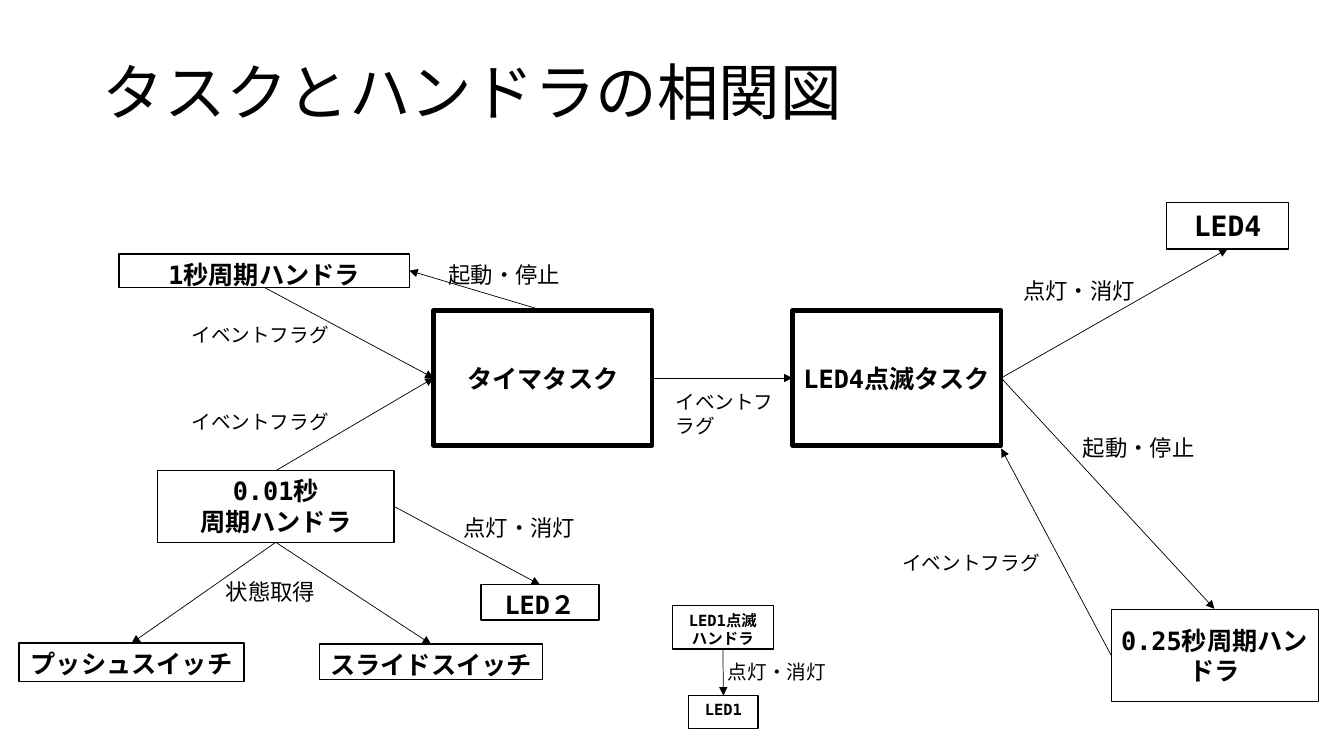
from dataclasses import dataclass

from lxml.etree import SubElement
from pptx import Presentation
from pptx.dml.color import RGBColor
from pptx.enum.shapes import MSO_CONNECTOR, MSO_SHAPE
from pptx.enum.text import MSO_ANCHOR, PP_ALIGN
from pptx.oxml.ns import qn
from pptx.util import Pt

PX = 9144  # EMU per px, 100 px to the inch
TOP, LEFT, BOTTOM, RIGHT = range(4)


@dataclass(frozen=True)
class Theme:
    face: str = "DejaVu Sans Mono"
    ink: RGBColor = RGBColor(0, 0, 0)
    paper: RGBColor = RGBColor(255, 255, 255)
    title: int = 44
    large: int = 20
    body: int = 18
    note: int = 16
    small: int = 14
    tiny: int = 11
    heavy: float = 3
    edge: float = 1
    thin: float = 0.5
    hair: float = 0.25


T = Theme()

# name: (text, position and size, type size, line width, anchor)
MID, HIGH = MSO_ANCHOR.MIDDLE, MSO_ANCHOR.TOP
BOXES = {
    "timer": ("タイマタスク", (430, 308, 217, 134), T.body, T.heavy, MID),
    "blink": ("LED4点滅タスク", (786, 308, 207, 134), T.body, T.heavy, MID),
    "blink1": ("LED1点滅\nハンドラ", (667, 601, 100, 43), T.tiny, T.edge, HIGH),
    "slide": ("スライドスイッチ", (317, 639, 221, 35), T.body, T.edge, HIGH),
    "push": ("プッシュスイッチ", (19, 638, 223, 38), T.body, T.edge, HIGH),
    "led2": ("LED２", (477, 580, 117, 35), T.body, T.edge, HIGH),
    "centi": ("0.01秒\n周期ハンドラ", (156, 467, 235, 71), T.body, T.edge, HIGH),
    "second": ("1秒周期ハンドラ", (118, 252, 288, 33), T.body, T.edge, HIGH),
    "led4": ("LED4", (1157, 201, 121, 46), T.large, T.edge, MID),
    "led1": ("LED1", (683, 690, 69, 33), T.tiny, T.edge, HIGH),
    "quarter": ("0.25秒周期ハンドラ", (1102, 604, 205, 92), T.body, T.hair, MID),
}

ARROWS = [
    ("blink", RIGHT, "led4", BOTTOM),
    ("timer", RIGHT, "blink", LEFT),
    ("second", BOTTOM, "timer", LEFT),
    ("centi", TOP, "timer", LEFT),
    ("centi", BOTTOM, "push", TOP),
    ("centi", BOTTOM, "slide", TOP),
    ("centi", RIGHT, "led2", TOP),
    ("blink", RIGHT, "quarter", TOP),
    ("blink1", BOTTOM, "led1", TOP),
    ("timer", TOP, "second", RIGHT),
]
CORNER = (993, 445)

FLAG, SWITCH, LIGHT = "イベントフラグ", "起動・停止", "点灯・消灯"
LABELS = [
    (FLAG, (660, 382, 121, 57), T.small),
    (SWITCH, (1064, 426, 132, 37), T.note),
    (LIGHT, (450, 505, 197, 37), T.note),
    ("状態取得", (214, 569, 122, 37), T.note),
    (LIGHT, (1005, 270, 132, 37), T.note),
    (SWITCH, (435, 254, 202, 37), T.note),
    (LIGHT, (712, 650, 162, 34), T.small),
    (FLAG, (180, 315, 221, 34), T.small),
    (FLAG, (180, 402, 221, 34), T.small),
    (FLAG, (885, 542, 221, 34), T.small),
]


def emu(area):
    return [n * PX for n in area]


def write(shape, text, size, align=PP_ALIGN.LEFT, anchor=HIGH, bold=False):
    frame = shape.text_frame
    frame.text = text
    frame.word_wrap = True
    frame.vertical_anchor = anchor
    for para in frame.paragraphs:
        para.alignment = align
        font = para.font
        font.name, font.size, font.bold = T.face, Pt(size), bold
        font.color.rgb = T.ink


def add_title(slide, text):
    title = slide.shapes.title
    title.left, title.top, title.width, title.height = emu((92, 40, 1150, 109))
    write(title, text, T.title, anchor=MID)
    title.text_frame.paragraphs[0].line_spacing = 0.9


def add_box(slide, text, area, size, width, anchor):
    box = slide.shapes.add_shape(MSO_SHAPE.RECTANGLE, *emu(area))
    box.shadow.inherit = False
    box.fill.solid()
    box.fill.fore_color.rgb = T.paper
    box.line.color.rgb = T.ink
    box.line.width = Pt(width)
    write(box, text, size, PP_ALIGN.CENTER, anchor, bold=True)
    return box


def add_arrow(slide, start, side, end=(0, 0)):
    """Draw an arrow from the side of a box to a point."""
    line = slide.shapes.add_connector(MSO_CONNECTOR.STRAIGHT, 0, 0, *emu(end))
    line.begin_connect(start, side)
    line.line.color.rgb = T.ink
    line.line.width = Pt(T.thin)
    props = line._element.spPr
    SubElement(props.find(qn("a:ln")), qn("a:tailEnd"), type="triangle")
    SubElement(props, qn("a:effectLst"))
    return line


def add_label(slide, text, area, size):
    write(slide.shapes.add_textbox(*emu(area)), text, size)


def main():
    deck = Presentation()
    deck.slide_width, deck.slide_height = emu((1333, 750))
    slide = deck.slides.add_slide(deck.slide_layouts[5])
    add_title(slide, "タスクとハンドラの相関図")
    boxes = {name: add_box(slide, *item) for name, item in BOXES.items()}
    for start, side, end, site in ARROWS:
        add_arrow(slide, boxes[start], side).end_connect(boxes[end], site)
    add_arrow(slide, boxes["quarter"], LEFT, CORNER)
    for label in LABELS:
        add_label(slide, *label)
    deck.save("out.pptx")


if __name__ == "__main__":
    main()
